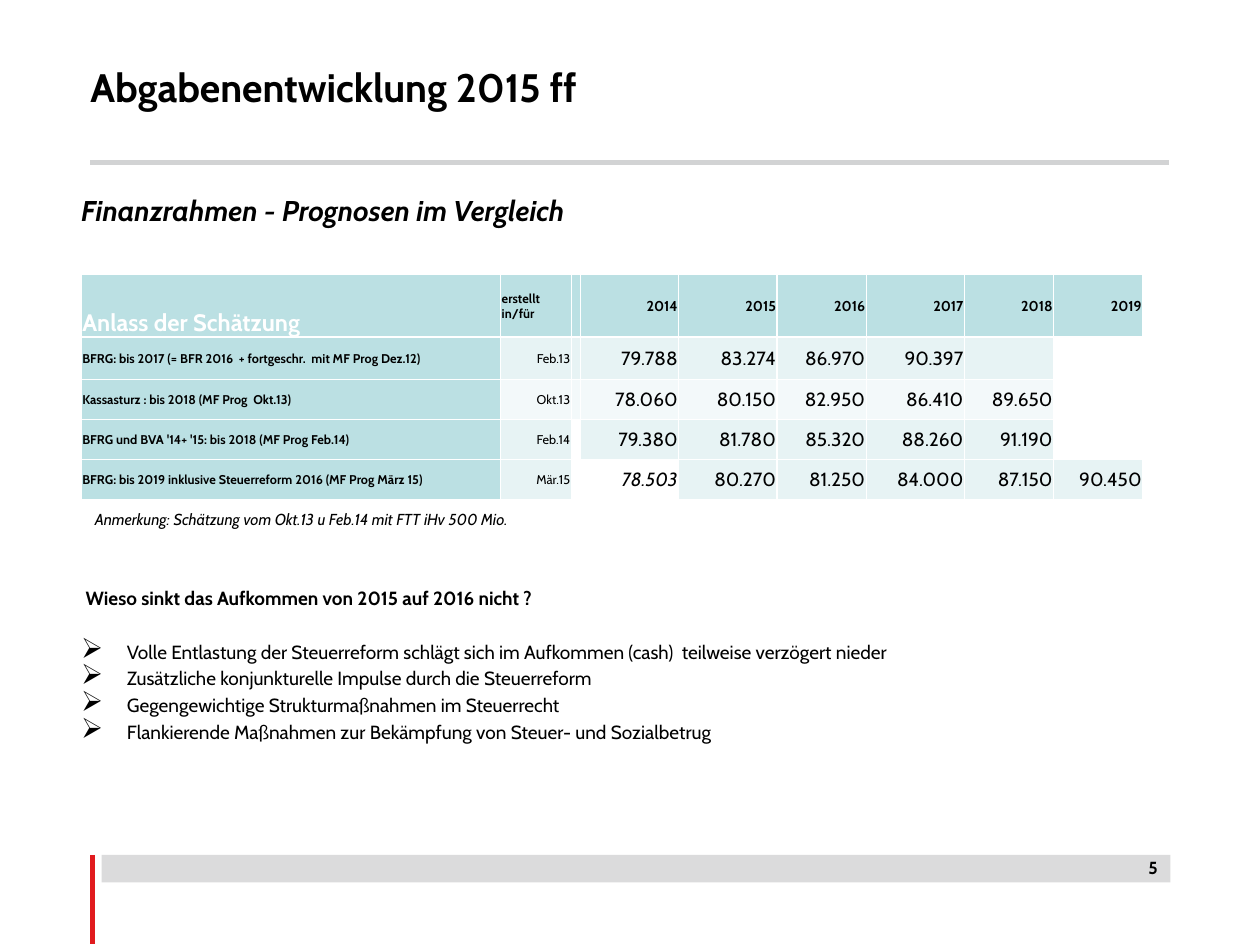
"""Builds the slide on tax revenue forecasts from 2015 onwards."""
import lxml.etree
import pptx
import pptx.dml.color
import pptx.enum.shapes
import pptx.enum.text
import pptx.oxml.ns
import pptx.util

Inches = pptx.util.Inches
Pt = pptx.util.Pt
qn = pptx.oxml.ns.qn
PP_ALIGN = pptx.enum.text.PP_ALIGN
ANCHOR = pptx.enum.text.MSO_ANCHOR

FONT = "Cabin"
CM_PER_INCH = 2.54
COLORS = {
    "black": "000000", "white": "FFFFFF", "grey": "D2D3D4", "red": "E11B1E",
    "teal": "BBE0E3", "light": "E7F3F4", "pale": "F3F9FA",
}
COLUMN_WIDTHS = [3.67, 0.62, 0.08, 0.86, 0.86, 0.78, 0.86, 0.78, 0.78]
ROW_HEIGHTS = [0.55, 0.37, 0.35, 0.35, 0.35]
FORECASTS = [
    ["Anlass der Schätzung", "erstellt in/für", "", "2014", "2015", "2016", "2017", "2018", "2019"],
    ["BFRG: bis 2017 (= BFR 2016  + fortgeschr.  mit MF Prog Dez.12)", "Feb.13", "",
     "79.788", "83.274", "86.970", "90.397", "", ""],
    ["Kassasturz : bis 2018 (MF Prog  Okt.13)", "Okt.13", "",
     "78.060", "80.150", "82.950", "86.410", "89.650", ""],
    ["BFRG und BVA '14+ '15: bis 2018 (MF Prog Feb.14)", "Feb.14", "",
     "79.380", "81.780", "85.320", "88.260", "91.190", ""],
    ["BFRG: bis 2019 inklusive Steuerreform 2016 (MF Prog März 15)", "Mär.15", "",
     "78.503", "80.270", "81.250", "84.000", "87.150", "90.450"],
]
ROW_FILLS = ["teal", "light", "pale", "light", "light"]
UNFILLED = {(1, 8), (2, 8), (3, 8), (3, 2), (4, 2), (4, 3)}
REASONS = [
    "Volle Entlastung der Steuerreform schlägt sich im Aufkommen (cash)  teilweise verzögert nieder",
    "Zusätzliche konjunkturelle Impulse durch die Steuerreform",
    "Gegengewichtige Strukturmaßnahmen im Steuerrecht",
    "Flankierende Maßnahmen zur Bekämpfung von Steuer- und Sozialbetrug",
]


def rgb(name):
    """Return the named colour."""
    return pptx.dml.color.RGBColor.from_string(COLORS[name])


def format_runs(para, size, bold=False, italic=False, color="black"):
    """Format every run of a paragraph."""
    for span in para.runs:
        span.font.name = FONT
        span.font.size = Pt(size)
        span.font.bold = bold
        span.font.italic = italic
        span.font.color.rgb = rgb(color)


def clear_margins(frame):
    """Remove the inner margins of a text frame."""
    frame.margin_left = frame.margin_top = frame.margin_right = frame.margin_bottom = 0


def add_title(page, text):
    """Fill and place the title placeholder."""
    title = page.shapes.title
    title.left, title.top = Inches(0.79), Inches(0.43)
    title.width, title.height = Inches(7.28), Inches(0.65)
    frame = title.text_frame
    frame.text = text
    clear_margins(frame)
    frame.vertical_anchor = ANCHOR.MIDDLE
    frame.paragraphs[0].alignment = PP_ALIGN.LEFT
    format_runs(frame.paragraphs[0], 25, bold=True)


def add_text(page, left, top, width, height, lines, size, bold=False, italic=False):
    """Add a text box with one paragraph per line and return it."""
    box = page.shapes.add_textbox(Inches(left), Inches(top), Inches(width), Inches(height))
    frame = box.text_frame
    frame.word_wrap = True
    clear_margins(frame)
    frame.text = "\n".join(lines)
    for para in frame.paragraphs:
        format_runs(para, size, bold, italic)
    return box


def add_bullets(page, left, top, width, height, lines):
    """Add an arrow-bulleted list."""
    box = add_text(page, left, top, width, height, lines, 12)
    for index, para in enumerate(box.text_frame.paragraphs):
        properties = para._p.get_or_add_pPr()
        properties.set("marL", str(Inches(0.4)))
        properties.set("indent", str(-Inches(0.4)))
        lxml.etree.SubElement(properties, qn("a:buSzPct"), val="148000")
        lxml.etree.SubElement(properties, qn("a:buFont"), typeface="OpenSymbol")
        lxml.etree.SubElement(properties, qn("a:buChar"), char="➢")
        if index:
            para.space_before = Pt(2.4)


def add_rule(page, start, end, color):
    """Add a straight line between two points."""
    rule = page.shapes.add_connector(
        pptx.enum.shapes.MSO_CONNECTOR.STRAIGHT, *map(Inches, start + end))
    rule.line.color.rgb = rgb(color)
    rule.line.width = Pt(2.84)
    lxml.etree.SubElement(rule._element.spPr, qn("a:effectLst"))


def add_footer(page, number):
    """Add the translucent footer bar and the page number."""
    bar = page.shapes.add_shape(
        pptx.enum.shapes.MSO_SHAPE.RECTANGLE,
        Inches(0.89), Inches(7.48), Inches(9.35), Inches(0.24))
    bar.shadow.inherit = False
    bar.fill.solid()
    bar.fill.fore_color.rgb = rgb("grey")
    bar.line.fill.background()
    shade = bar._element.spPr.find(qn("a:solidFill")).find(qn("a:srgbClr"))
    lxml.etree.SubElement(shade, qn("a:alpha"), val="80000")
    box = add_text(page, 9.53, 7.5, 0.6, 0.2, [number], 11, bold=True)
    box.text_frame.paragraphs[0].alignment = PP_ALIGN.RIGHT


def set_borders(cell, row):
    """Draw white borders, heavier between header and body."""
    properties = cell._tc.get_or_add_tcPr()
    heavy_sides = {0: "B", 1: "T"}
    for side in "LRTB":
        width = 1.5 if heavy_sides.get(row) == side else 1
        border = lxml.etree.SubElement(properties, qn(f"a:ln{side}"), w=str(Pt(width)))
        fill = lxml.etree.SubElement(border, qn("a:solidFill"))
        lxml.etree.SubElement(fill, qn("a:srgbClr"), val=COLORS["white"])


def fill_cell(cell, row, column, text):
    """Write and format one cell of the forecast table."""
    cell.margin_left = cell.margin_top = cell.margin_right = Inches(0.01)
    cell.margin_bottom = 0
    cell.vertical_anchor = ANCHOR.MIDDLE
    set_borders(cell, row)
    if (row, column) in UNFILLED:
        cell.fill.background()
    else:
        cell.fill.solid()
        cell.fill.fore_color.rgb = rgb("teal" if column == 0 else ROW_FILLS[row])
    if not text:
        return
    cell.text_frame.text = text
    para = cell.text_frame.paragraphs[0]
    is_label = column == 0 or (row, column) == (0, 1)
    para.alignment = PP_ALIGN.LEFT if is_label else PP_ALIGN.RIGHT
    if (row, column) == (0, 0):
        cell.vertical_anchor = ANCHOR.BOTTOM
        format_runs(para, 15, bold=True, color="white")
    elif column < 2:
        format_runs(para, 8, bold=is_label)
    elif row == 0:
        format_runs(para, 9, bold=True)
    else:
        format_runs(para, 12, italic=(row, column) == (4, 3))


def add_forecast_table(page):
    """Add the table that compares the forecasts."""
    table = page.shapes.add_table(
        len(ROW_HEIGHTS), len(COLUMN_WIDTHS), Inches(0.71), Inches(2.4),
        Inches(sum(COLUMN_WIDTHS)), Inches(sum(ROW_HEIGHTS))).table
    table.first_row = table.horz_banding = False
    for column, width in zip(table.columns, COLUMN_WIDTHS):
        column.width = Inches(width)
    for row, (height, texts) in enumerate(zip(ROW_HEIGHTS, FORECASTS)):
        table.rows[row].height = Inches(height)
        for column, text in enumerate(texts):
            fill_cell(table.cell(row, column), row, column, text)


def main():
    """Build and save the deck."""
    deck = pptx.Presentation()
    deck.slide_width = Inches(28 / CM_PER_INCH)
    deck.slide_height = Inches(21 / CM_PER_INCH)
    page = deck.slides.add_slide(deck.slide_layouts[5])
    add_rule(page, (0.79, 1.42), (10.23, 1.42), "grey")
    add_rule(page, (0.81, 7.48), (0.81, 8.26), "red")
    add_footer(page, "5")
    add_title(page, "Abgabenentwicklung 2015 ff")
    add_text(page, 0.71, 1.69, 9.45, 0.32,
             ["Finanzrahmen - Prognosen im Vergleich"], 18, bold=True, italic=True)
    add_forecast_table(page)
    add_text(page, 0.83, 4.46, 9.3, 0.18,
             ["Anmerkung: Schätzung vom Okt.13 u Feb.14 mit FTT iHv 500 Mio."], 10, italic=True)
    add_text(page, 0.75, 5.13, 9.4, 0.21,
             ["Wieso sinkt das Aufkommen von 2015 auf 2016 nicht ?"], 12, bold=True)
    add_bullets(page, 0.71, 5.6, 9.45, 0.95, REASONS)
    deck.save("out.pptx")


if __name__ == "__main__":
    main()
